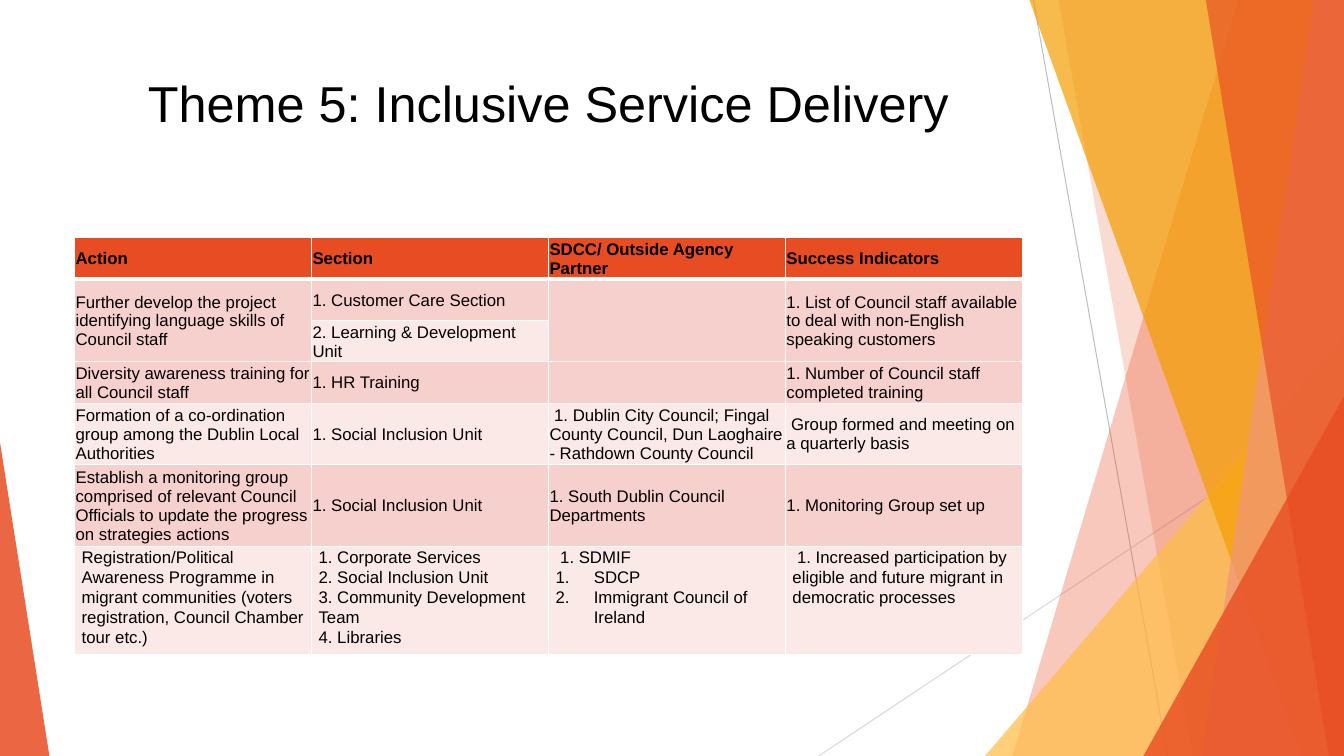
"""Build the Theme 5 slide: an action table beside overlapping angled shapes."""
from lxml import etree
from pptx import Presentation
from pptx.dml.color import RGBColor
from pptx.enum.shapes import MSO_CONNECTOR, MSO_SHAPE
from pptx.enum.text import MSO_ANCHOR, PP_ALIGN
from pptx.oxml.ns import qn
from pptx.util import Inches, Pt

LINE = MSO_CONNECTOR.STRAIGHT
TRI = MSO_SHAPE.ISOSCELES_TRIANGLE
TOP, MID = MSO_ANCHOR.TOP, MSO_ANCHOR.MIDDLE
CENTER = PP_ALIGN.CENTER

COLORS = {
    "black": "000000", "white": "FFFFFF", "red": "E84C22", "salmon": "F1947A",
    "amber": "F49D00", "gold": "FFBD47", "rose": "F6D0CD", "blush": "FBE9E8",
    "gray": "BFBFBF", "pale": "D9D9D9",
}
WIDE, HIGH = 13.33, 7.5


def paint(shape, color, alpha):
    """Give a shape a clear fill with no line or shadow."""
    shape.shadow.inherit = False
    shape.line.fill.background()
    shape.fill.solid()
    shape.fill.fore_color.rgb = RGBColor.from_string(COLORS[color])
    tint = shape.fill._xPr.find(qn("a:solidFill"))[0]
    etree.SubElement(tint, qn("a:alpha"), val=str(alpha * 1000))


def write(para, text, size, bold=False, font="Arial"):
    """Add one black run to a paragraph."""
    run = para.add_run()
    run.text = text
    run.font.size = Pt(size)
    run.font.name = font
    run.font.bold = bold
    run.font.color.rgb = RGBColor.from_string(COLORS["black"])


prs = Presentation()
prs.slide_width, prs.slide_height = Inches(WIDE), Inches(HIGH)
slide = prs.slides.add_slide(prs.slide_layouts[6])
shapes = slide.shapes

for x1, y1, x2, y2, color in [
    (10.25, 0, 11.58, HIGH, "gray"),
    (WIDE, 4.03, 8.12, HIGH, "pale"),
]:
    line = shapes.add_connector(LINE, Inches(x1), Inches(y1), Inches(x2), Inches(y2))
    line.line.width = Pt(0.75)
    line.line.color.rgb = RGBColor.from_string(COLORS[color])
    etree.SubElement(line._element.spPr, qn("a:effectLst"))

BANDS = [
    ("band", 12.28, 10.04, "red", 30),
    ("band", 10.5, 11.83, "red", 20),
    ("peak", 9.77, 3.33, 3.56, 1, "gold", 72),
    ("band", 10.21, 12.91, "amber", 70),
    ("band", 13.03, 11.92, "salmon", 70),
    ("band", 11.96, 13.18, "red", 65),
    ("peak", 11.34, 3.93, 1.99, 1, "red", 80),
    ("peak", 0, 4.39, 0.49, 0, "red", 85),
]
for kind, *place, color, alpha in BANDS:
    if kind == "band":
        top, low = place
        path = shapes.build_freeform(Inches(top), 0)
        path.add_line_segments(
            [(Inches(x), Inches(y)) for x, y in [(WIDE, 0), (WIDE, HIGH), (low, HIGH)]]
        )
        shape = path.convert_to_shape()
    else:
        left, top, width, tip = place
        shape = shapes.add_shape(
            TRI, Inches(left), Inches(top), Inches(width), Inches(HIGH - top)
        )
        shape.adjustments[0] = tip
    paint(shape, color, alpha)

title = shapes.add_textbox(Inches(0.74), Inches(0.67), Inches(9.4), Inches(1.44))
frame = title.text_frame
frame.word_wrap = True
frame.vertical_anchor = TOP
frame.paragraphs[0].alignment = CENTER
write(frame.paragraphs[0], "Theme 5: Inclusive Service Delivery", 36)

ROWS = [
    (0.4, "red", ["Action"], ["Section"], ["SDCC/ Outside Agency Partner"],
     ["Success Indicators"]),
    (0.41, "rose",
     ["Further develop the project identifying language skills of Council staff"],
     ["1. Customer Care Section"], [],
     ["1. List of Council staff available to deal with non-English speaking customers"]),
    (0.41, "blush", [], ["2. Learning & Development Unit"], [], []),
    (0.4, "rose", ["Diversity awareness training for all Council staff"],
     ["1. HR Training"], [], ["1. Number of Council staff completed training"]),
    (0.57, "blush",
     ["Formation of a co-ordination group among the Dublin Local Authorities"],
     ["1. Social Inclusion Unit"],
     [" 1. Dublin City Council; Fingal County Council, Dun Laoghaire"
      " - Rathdown County Council"],
     [" Group formed and meeting on a quarterly basis"]),
    (0.76, "rose",
     ["Establish a monitoring group comprised of relevant Council Officials"
      " to update the progress on strategies actions"],
     ["1. Social Inclusion Unit"], ["1. South Dublin Council Departments"],
     ["1. Monitoring Group set up"]),
    (1, "blush",
     ["Registration/Political Awareness Programme in migrant communities"
      " (voters registration, Council Chamber tour etc.)"],
     ["1. Corporate Services", "2. Social Inclusion Unit",
      "3. Community Development Team", "4. Libraries"],
     [" 1. SDMIF", "SDCP", "Immigrant Council of Ireland"],
     [" 1. Increased participation by eligible and future migrant"
      " in democratic processes"]),
]
LAST = len(ROWS) - 1
table = shapes.add_table(
    len(ROWS), 4, Inches(0.74), Inches(2.36), Inches(9.4), Inches(3.95)
).table
for col in table.columns:
    col.width = Inches(2.35)

for r, (height, color, *cells) in enumerate(ROWS):
    table.rows[r].height = Inches(height)
    for c, texts in enumerate(cells):
        cell = table.cell(r, c)
        side = 0.07 if r == LAST else 0.01
        cell.margin_left = cell.margin_right = Inches(side)
        cell.margin_top = Inches(0 if r == LAST else 0.01)
        cell.margin_bottom = 0
        cell.vertical_anchor = TOP if r == LAST else MID
        props = cell._tc.get_or_add_tcPr()
        for edge in "LRTB":
            thick = (r, edge) in [(0, "B"), (1, "T")]
            rule = etree.SubElement(props, qn("a:ln" + edge), w=str(Pt(3 if thick else 1)))
            solid = etree.SubElement(rule, qn("a:solidFill"))
            etree.SubElement(solid, qn("a:srgbClr"), val=COLORS["white"])
        cell.fill.solid()
        cell.fill.fore_color.rgb = RGBColor.from_string(COLORS[color])
        frame = cell.text_frame
        for i, text in enumerate(texts):
            para = frame.add_paragraph() if i else frame.paragraphs[0]
            write(para, text, 12, r == 0)
            if r == LAST:
                para.line_spacing = 1.07
            if r == LAST and c == 2 and i:
                form = para._p.get_or_add_pPr()
                form.set("marL", str(Inches(0.45 - side)))
                form.set("indent", str(-Inches(0.45 - side)))
                etree.SubElement(form, qn("a:buFont"), typeface="+mj-lt")
                etree.SubElement(form, qn("a:buAutoNum"), type="arabicPeriod")

write(table.cell(1, 0).text_frame.paragraphs[0], " ", 8, font="Calibri")
for c in (0, 2, 3):
    table.cell(1, c).merge(table.cell(2, c))

prs.save("out.pptx")
